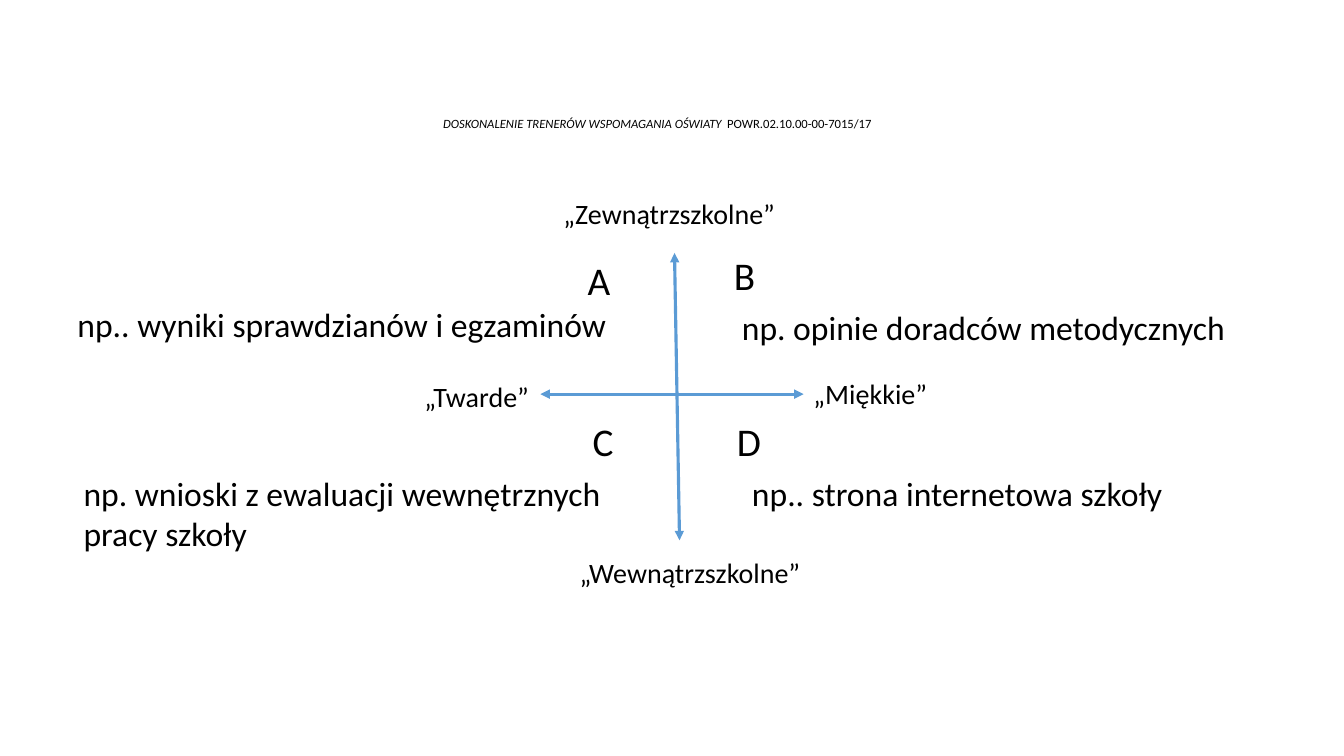
"""Builds a slide with four quadrants of school data sources around two axes."""
from typing import NamedTuple

from lxml import etree
from pptx import Presentation
from pptx import util as u
from pptx.dml.color import RGBColor
from pptx.enum import shapes, text
from pptx.oxml import ns

FONT = "Calibri"
BLACK = "000000"
BLUE = "5B9BD5"


class Label(NamedTuple):
    lines: tuple[str, ...]
    left: float
    top: float
    width: float
    height: float
    size: float
    wrap: bool = False


class Axis(NamedTuple):
    start: tuple[float, float]
    end: tuple[float, float]
    target: str = ""


LABELS = (
    Label(("„Twarde”",), 4.11, 3.72, 1.25, 0.44, 20),
    Label(("„Miękkie”",), 7.97, 3.69, 1.34, 0.44, 20),
    Label(("„Zewnątrzszkolne”",), 5.49, 1.9, 2.32, 0.44, 20),
    Label(("„Wewnątrzszkolne”",), 5.65, 5.46, 2.41, 0.44, 20),
    Label(("A",), 5.73, 2.49, 0.29, 0.57, 28, True),
    Label(("B",), 7.18, 2.44, 0.29, 0.57, 28, True),
    Label(("C",), 5.78, 4.09, 0.29, 0.57, 28, True),
    Label(("D",), 7.21, 4.09, 0.29, 0.57, 28, True),
    Label(("np.. wyniki sprawdzianów i egzaminów",), 0.67, 2.97, 5.57, 0.5, 24),
    Label(("np. opinie doradców metodycznych",), 7.26, 3, 5.12, 0.5, 24),
    Label(("np. wnioski z ewaluacji wewnętrznych", "pracy szkoły"),
          0.73, 4.64, 5.45, 0.91, 24),
    Label(("np.. strona internetowa szkoły",), 7.36, 4.64, 4.31, 0.5, 24),
)
AXES = (
    Axis((6.69, 2.51), (6.74, 5.36)),
    Axis((5.36, 3.91), (7.97, 3.91), "„Miękkie”"),
)
HEADING = (
    ("DOSKONALENIE TRENERÓW WSPOMAGANIA OŚWIATY ", True),
    (" POWR.02.10.00-00-7015/17", False),
)


def color(value: str) -> RGBColor:
    """Turn a hex string into a colour."""
    return RGBColor.from_string(value)


def apply_format(target, values: dict) -> None:
    """Set every attribute named in the dict."""
    for name, value in values.items():
        setattr(target, name, value)


def format_font(font, size: float, italic: bool = False) -> None:
    """Give a font the slide's typeface and colour."""
    apply_format(font, {"name": FONT, "size": u.Pt(size), "italic": italic})
    font.color.rgb = color(BLACK)


def add_heading(page) -> None:
    """Add the centred project name."""
    box = page.shapes.add_textbox(
        u.Inches(0.79), u.Inches(0.46), u.Inches(11.46), u.Inches(1.22))
    apply_format(box.text_frame, {"word_wrap": True, "margin_top": u.Inches(0.71)})
    para = box.text_frame.paragraphs[0]
    apply_format(para, {"alignment": text.PP_ALIGN.CENTER, "line_spacing": 0.9})
    for words, italic in HEADING:
        span = para.add_run()
        span.text = words
        format_font(span.font, 9, italic)


def add_label(page, label: Label):
    """Add one text label and return its box."""
    box = page.shapes.add_textbox(
        *map(u.Inches, (label.left, label.top, label.width, label.height)))
    frame = box.text_frame
    frame.text = "\n".join(label.lines)
    apply_format(frame, {
        "word_wrap": label.wrap,
        "auto_size": text.MSO_AUTO_SIZE.SHAPE_TO_FIT_TEXT,
    })
    for para in frame.paragraphs:
        for span in para.runs:
            format_font(span.font, label.size)
    return box


def add_axis(page, axis: Axis, boxes: dict) -> None:
    """Add a line with arrowheads at both ends."""
    line = page.shapes.add_connector(
        shapes.MSO_CONNECTOR.STRAIGHT, *map(u.Inches, axis.start + axis.end))
    if axis.target:
        line.end_connect(boxes[axis.target], 1)
    line.line.color.rgb = color(BLUE)
    line.line.width = u.Pt(2.25)
    for end in ("a:headEnd", "a:tailEnd"):
        etree.SubElement(line.line._get_or_add_ln(), ns.qn(end), type="triangle")
    etree.SubElement(line._element.spPr, ns.qn("a:effectLst"))


def main() -> None:
    """Build and save the deck."""
    deck = Presentation()
    apply_format(deck, {"slide_width": u.Inches(13.33), "slide_height": u.Inches(7.5)})
    page = deck.slides.add_slide(deck.slide_layouts[6])
    add_heading(page)
    boxes = {label.lines[0]: add_label(page, label) for label in LABELS}
    for axis in AXES:
        add_axis(page, axis, boxes)
    deck.save("out.pptx")


if __name__ == "__main__":
    main()
